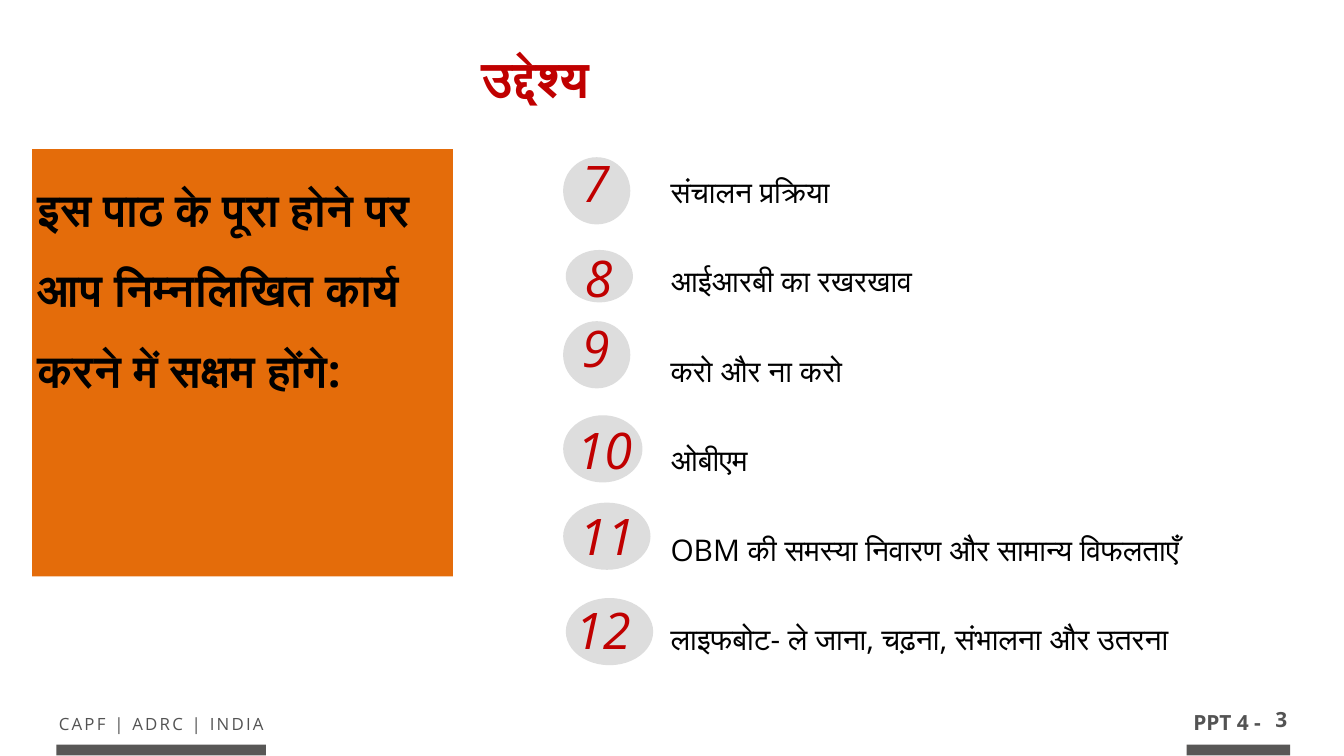
import pptx
import pptx.util
import pptx.dml.color
import pptx.enum.shapes
import pptx.enum.text
import lxml.etree
from dataclasses import dataclass

Inches = pptx.util.Inches
Align = pptx.enum.text.PP_ALIGN
Shape = pptx.enum.shapes.MSO_SHAPE


@dataclass
class Theme:
    face: str = "Open Sans"
    red: str = "C00000"
    black: str = "000000"
    grey: str = "535353"
    bar: str = "585756"
    orange: str = "E46C0A"
    disc: str = "DDDDDD"
    head: float = 27
    lead: float = 24
    body: float = 16
    page: float = 11.2
    foot: float = 9


class Deck:
    def __init__(self, theme, slide):
        self.theme = theme
        self.slide = slide

    def style(self, par, text, size, color, bold=False, slant=False, align=Align.LEFT):
        """Fill a paragraph, with one face for Latin and Devanagari."""
        par.text = text
        par.alignment = align
        font = par.font
        font.name = self.theme.face
        font.size = pptx.util.Pt(size)
        font.bold = bold
        font.italic = slant
        font.color.rgb = pptx.dml.color.RGBColor.from_string(color)
        props = par._p.pPr.find(pptx.oxml.ns.qn("a:defRPr"))
        script = lxml.etree.SubElement(props, pptx.oxml.ns.qn("a:cs"))
        script.set("typeface", self.theme.face)
        return par

    def frame(self, shape, inset=0.03, wrap=True):
        frame = shape.text_frame
        frame.word_wrap = wrap
        frame.auto_size = pptx.enum.text.MSO_AUTO_SIZE.NONE
        frame.vertical_anchor = pptx.enum.text.MSO_ANCHOR.TOP
        frame.margin_left = frame.margin_right = Inches(inset)
        frame.margin_top = frame.margin_bottom = Inches(inset)
        return frame

    def title(self, box, text):
        shape = self.slide.shapes.title
        shape.left, shape.top, shape.width, shape.height = map(Inches, box)
        par = self.frame(shape).paragraphs[0]
        self.style(par, text, self.theme.head, self.theme.red, bold=True)

    def block(self, box, fill, kind=Shape.RECTANGLE, home=None):
        shape = (home or self.slide).shapes.add_shape(kind, *map(Inches, box))
        shape.shadow.inherit = False
        shape.fill.solid()
        shape.fill.fore_color.rgb = pptx.dml.color.RGBColor.from_string(fill)
        shape.line.fill.background()
        return shape

    def label(self, box, text, size, color, home=None, inset=0.03, wrap=True, **look):
        shape = (home or self.slide).shapes.add_textbox(*map(Inches, box))
        par = self.frame(shape, inset, wrap).paragraphs[0]
        return self.style(par, text, size, color, **look)

    def panel(self, box, text):
        shape = self.block(box, self.theme.orange)
        par = self.frame(shape, 0.04).paragraphs[0]
        self.style(par, text, self.theme.lead, self.theme.black, bold=True)
        par.line_spacing = 1.5
        par.space_before = pptx.util.Pt(21)

    def topics(self, box, items):
        frame = self.frame(self.slide.shapes.add_textbox(*map(Inches, box)))
        for i, item in enumerate(items):
            par = frame.add_paragraph() if i else frame.paragraphs[0]
            self.style(par, item, self.theme.body, self.theme.black)
            par.level = 1
            par.line_spacing = 2.5
            par._p.pPr.set("marL", str(Inches(0.5)))
            par._p.pPr.set("indent", "0")

    def badge(self, number, disc, box):
        """Group a disc with the number on it."""
        group = self.slide.shapes.add_group_shape()
        self.block(disc, self.theme.disc, Shape.OVAL, group)
        self.label(box, str(number), self.theme.head, self.theme.red, group, slant=True)

    def footer(self, page):
        theme = self.theme
        before = pptx.util.Pt(6)
        name = self.label((0.25, 5.28, 1.9, 0.22), "CAPF | ADRC | INDIA",
                          theme.foot, theme.grey, align=Align.CENTER)
        name.space_before = before
        name._p.pPr.find(pptx.oxml.ns.qn("a:defRPr")).set("spc", "120")
        unit = self.label((8.84, 5.25, 0.58, 0.25), "PPT 4 -", theme.page, theme.grey,
                          wrap=False, bold=True, align=Align.CENTER)
        unit.space_before = before
        for left, width in ((0.42, 1.56), (8.83, 0.77)):
            self.block((left, 5.54, width, 0.08), theme.bar)
        num = self.label((9.4, 5.17, 0.23, 0.36), str(page), theme.page, theme.grey,
                         inset=0.09, bold=True)
        num.space_before = pptx.util.Pt(2.2)


def main():
    show = pptx.Presentation()
    show.slide_width = Inches(10)
    show.slide_height = show.slide_width * 9 // 16
    deck = Deck(Theme(), show.slides.add_slide(show.slide_layouts[5]))

    deck.footer(3)
    deck.panel((0.24, 1.11, 3.13, 3.18),
               "इस पाठ के पूरा होने पर आप निम्नलिखित कार्य करने में सक्षम होंगे:")
    deck.title((3.55, 0.32, 2.21, 0.52), "उद्देश्य")
    deck.topics((4.46, 0.86, 5.3, 3.99), (
        "संचालन प्रक्रिया",
        "आईआरबी का रखरखाव",
        "करो और ना करो",
        "ओबीएम",
        "OBM की समस्या निवारण और सामान्य विफलताएँ",
        "लाइफबोट- ले जाना, चढ़ना, संभालना और उतरना",
    ))

    badges = (
        ((4.19, 1.17, 0.5, 0.5), (4.3, 1.1, 0.34, 0.69)),
        ((4.21, 1.86, 0.5, 0.39), (4.32, 1.81, 0.34, 0.53)),
        ((4.19, 2.39, 0.5, 0.5), (4.3, 2.33, 0.34, 0.69)),
        ((4.19, 3.09, 0.59, 0.5), (4.26, 3.09, 0.52, 0.69)),
        ((4.19, 3.74, 0.65, 0.5), (4.28, 3.73, 0.51, 0.69)),
        ((4.21, 4.45, 0.65, 0.5), (4.25, 4.43, 0.53, 0.69)),
    )
    for number, (disc, box) in enumerate(badges, 7):
        deck.badge(number, disc, box)

    show.save("out.pptx")


if __name__ == "__main__":
    main()
